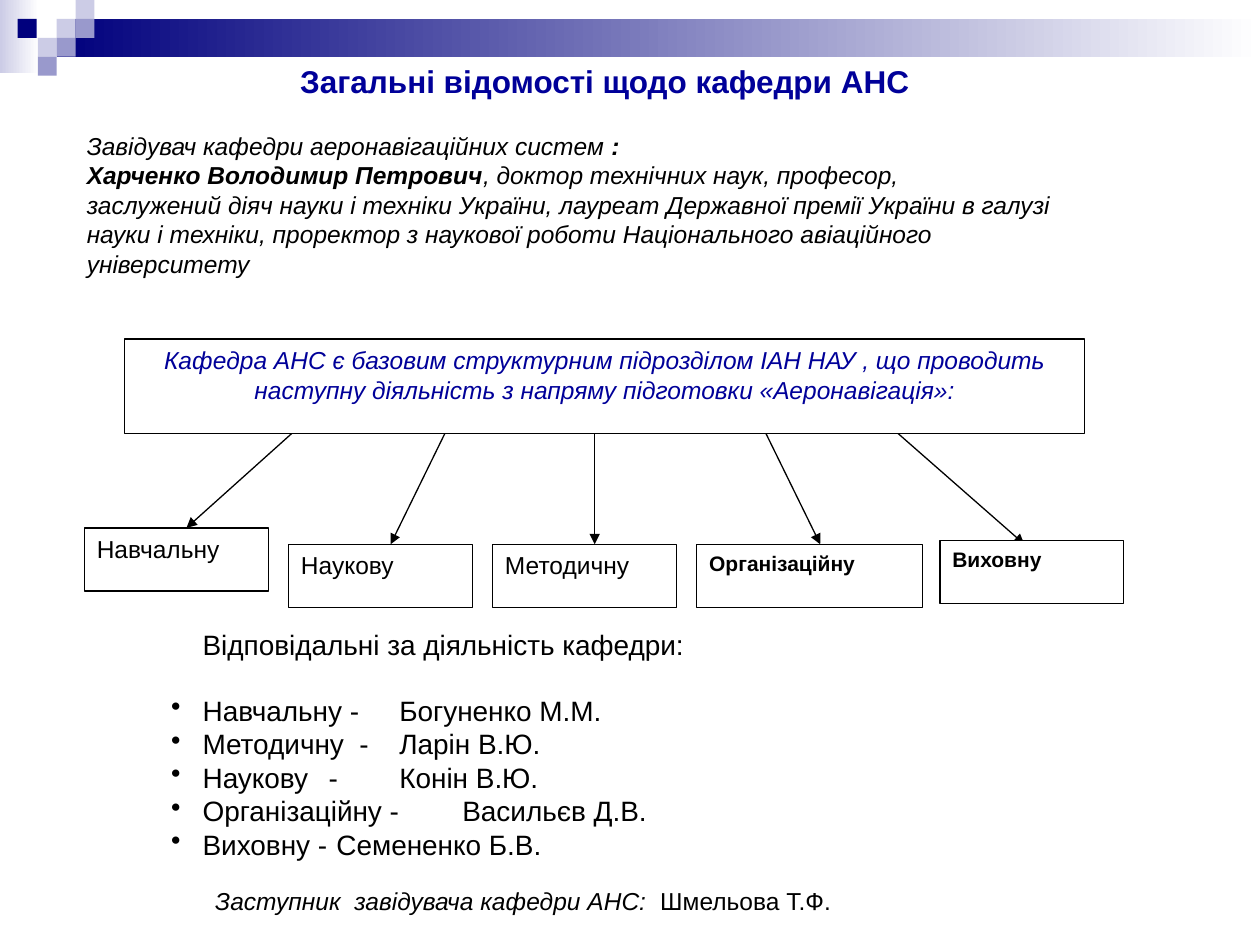
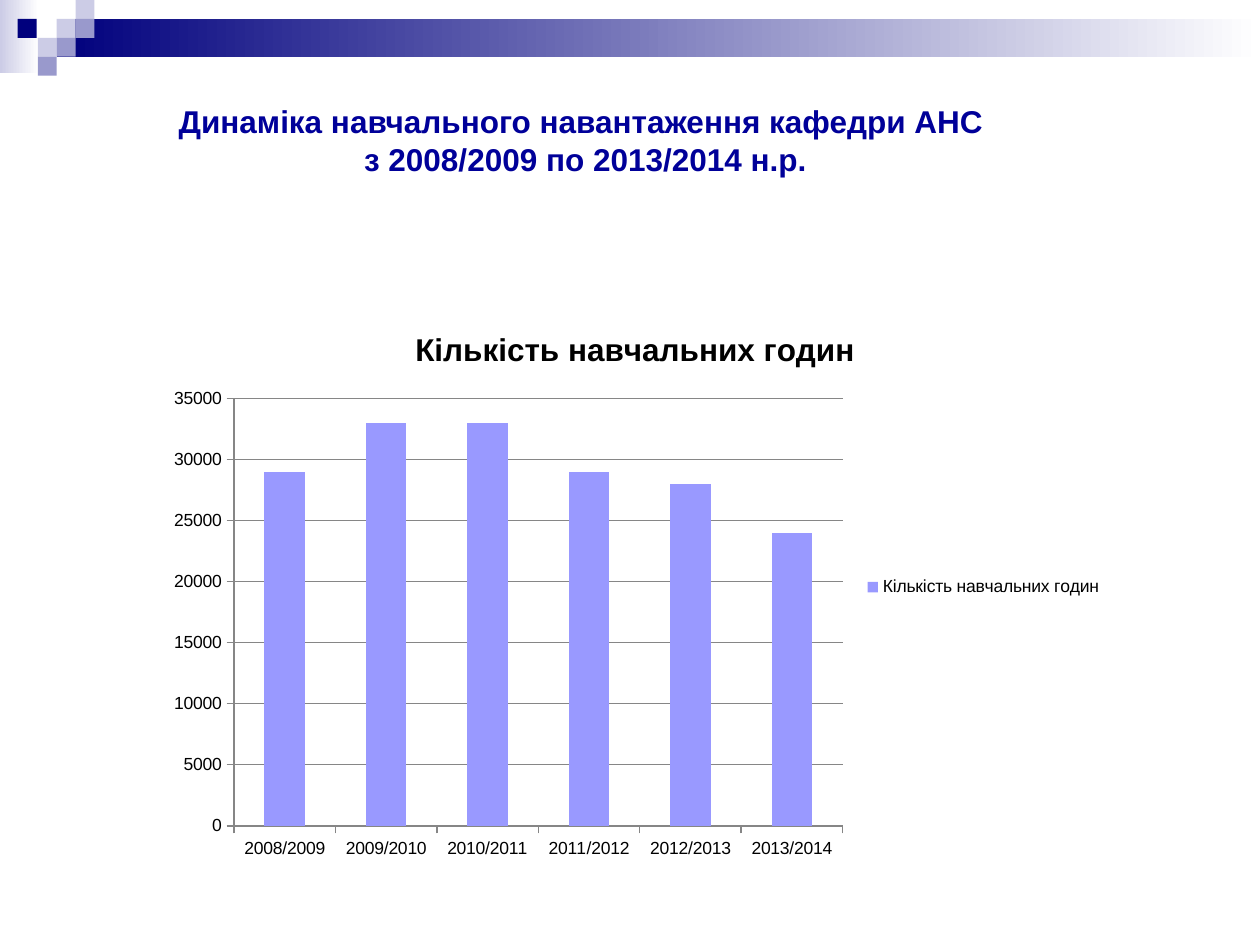
from lxml.etree import SubElement
from pptx import Presentation
from pptx.chart.data import CategoryChartData
from pptx.dml.color import RGBColor
from pptx.enum.chart import XL_CHART_TYPE as ChartType
from pptx.enum.chart import XL_LEGEND_POSITION as LegendPosition
from pptx.enum.chart import XL_TICK_MARK as TickMark
from pptx.enum.shapes import MSO_CONNECTOR as Connector
from pptx.enum.shapes import MSO_SHAPE as Shape
from pptx.enum.text import MSO_ANCHOR as Anchor
from pptx.enum.text import PP_ALIGN as Align
from pptx.oxml.ns import qn
from pptx.util import Inches, Pt

COLORS = {
    "navy": "00007D",
    "lilac": "9999CC",
    "pale": "CCCCE6",
    "white": "FFFFFF",
    "black": "000000",
    "heading": "000099",
    "bar": "9999FF",
    "grid": "868686",
}
FONT = "Arial"
TITLE = {"size": 18, "bold": True, "color": "heading"}
BODY = {"size": 14}
ITALIC = {"size": 14, "italic": True}
SMALL_BOLD = {"size": 12, "bold": True}
LIST = {"size": 16}

# Header mosaic: left, top and colour of each square
SQUARE = 0.15
MOSAIC = [
    (0.45, 0.15, "pale"), (0.6, 0, "pale"), (0.6, 0.15, "lilac"),
    (0.3, 0.3, "pale"), (0.14, 0.15, "navy"), (0.45, 0.3, "lilac"),
    (0.3, 0.45, "lilac"),
]

# Activity boxes: text, left, top, width, format
ACTIVITIES = [
    ("Навчальну", 0.67, 4.19, 1.46, BODY),
    ("Наукову", 2.29, 4.32, 1.46, BODY),
    ("Методичну", 3.91, 4.32, 1.46, BODY),
    ("Організаційну", 5.53, 4.32, 1.79, SMALL_BOLD),
    ("Виховну", 7.46, 4.29, 1.46, SMALL_BOLD),
]
# Arrows: start x, end x, end y
ARROWS = [
    (2.45, 1.48, 4.19), (3.59, 3.1, 4.32), (4.72, 4.72, 4.32),
    (6.02, 6.51, 4.32), (6.99, 8.13, 4.32),
]
RESPONSIBLE = [
    "Навчальну -\t Богуненко М.М.",
    "Методичну  -\t Ларін В.Ю.",
    "Наукову \t-\t Конін В.Ю.",
    "Організаційну -\t Васильєв Д.В.",
    "Виховну -\t Семененко Б.В.",
]
HOURS = {
    "2008/2009": 29000, "2009/2010": 33000, "2010/2011": 33000,
    "2011/2012": 29000, "2012/2013": 28000, "2013/2014": 24000,
}
HOURS_NAME = "Кількість навчальних годин"


def rgb(name):
    return RGBColor.from_string(COLORS[name])


def format_font(font, style):
    font.color.rgb = rgb(style.get("color", "black"))
    values = {"name": FONT, "size": Pt(style["size"]),
              "bold": style.get("bold", False),
              "italic": style.get("italic", False)}
    for attribute, value in values.items():
        setattr(font, attribute, value)


def write(frame, paragraphs, align=Align.LEFT, anchor=Anchor.TOP):
    """Fill a frame; each paragraph is a list of (text, style) runs."""
    frame.word_wrap = True
    frame.vertical_anchor = anchor
    for index, runs in enumerate(paragraphs):
        paragraph = frame.paragraphs[0] if index == 0 else frame.add_paragraph()
        paragraph.alignment = align
        for text, style in runs:
            run = paragraph.add_run()
            run.text = text
            format_font(run.font, style)


def add_text(slide, box, paragraphs, **placement):
    frame = slide.shapes.add_textbox(*map(Inches, box)).text_frame
    write(frame, paragraphs, **placement)
    return frame


def add_rectangle(slide, box, color):
    shape = slide.shapes.add_shape(Shape.RECTANGLE, *map(Inches, box))
    shape.shadow.inherit = False
    shape.fill.solid()
    shape.fill.fore_color.rgb = rgb(color)
    shape.line.fill.background()
    return shape


def add_gradient(slide, box, color):
    fill = add_rectangle(slide, box, color).fill
    fill.gradient()
    fill.gradient_angle = 0
    for stop, name, position in zip(fill.gradient_stops, (color, "white"), (0, 1)):
        stop.color.rgb = rgb(name)
        stop.position = position


def add_header(slide):
    add_gradient(slide, (0, 0, 0.31, 0.58), "pale")
    add_gradient(slide, (0.45, 0.15, 9.55, 0.3), "navy")
    for left, top, color in MOSAIC:
        add_rectangle(slide, (left, top, SQUARE, SQUARE), color)


def add_framed_box(slide, box, text, style, align=Align.LEFT):
    shape = add_rectangle(slide, box, "white")
    shape.line.color.rgb = rgb("black")
    shape.line.width = Pt(0.75)
    write(shape.text_frame, [[(text, style)]], align=align)


def add_arrow(slide, start, end):
    arrow = slide.shapes.add_connector(Connector.STRAIGHT,
                                       *map(Inches, start + end))
    arrow.line.color.rgb = rgb("black")
    arrow.line.width = Pt(0.75)
    SubElement(arrow.line._get_or_add_ln(), qn("a:tailEnd"), type="triangle")
    SubElement(arrow._element.spPr, qn("a:effectLst"))


def indent_list(frame):
    """Indent the heading and its items, and give the items bullets."""
    heading, *items = frame.paragraphs
    heading.space_after = Pt(18.4)
    for paragraph in frame.paragraphs:
        paragraph._p.get_or_add_pPr().set("marL", str(Inches(1)))
    for paragraph in items:
        properties = paragraph._p.get_or_add_pPr()
        properties.set("indent", str(Inches(-0.25)))
        SubElement(properties, qn("a:buChar"), char="•")


def add_hours_chart(slide, box):
    data = CategoryChartData()
    data.categories = HOURS.keys()
    data.add_series(HOURS_NAME, HOURS.values())
    chart = slide.shapes.add_chart(ChartType.COLUMN_CLUSTERED,
                                   *map(Inches, box), data).chart
    format_font(chart.font, {"size": 10})

    # Title and legend
    chart.has_title = True
    title = chart.chart_title
    title.include_in_layout = False
    write_run = title.text_frame.paragraphs[0].add_run()
    write_run.text = HOURS_NAME
    format_font(write_run.font, {"size": 18, "bold": True})
    chart.has_legend = True
    chart.legend.position = LegendPosition.RIGHT
    chart.legend.include_in_layout = False

    # Columns
    plot = chart.plots[0]
    plot.gap_width = 150
    plot.vary_by_categories = False
    fill = plot.series[0].format.fill
    fill.solid()
    fill.fore_color.rgb = rgb("bar")

    # Axes
    values = chart.value_axis
    for attribute, value in {"minimum_scale": 0, "maximum_scale": 35000,
                             "major_unit": 5000}.items():
        setattr(values, attribute, value)
    values.has_major_gridlines = True
    values.major_gridlines.format.line.color.rgb = rgb("grid")
    for axis in (chart.category_axis, values):
        axis.major_tick_mark = TickMark.OUTSIDE
        axis.format.line.color.rgb = rgb("grid")


def build_department(slide):
    add_header(slide)
    responsible = [["Відповідальні за діяльність кафедри:", LIST]]
    responsible += [[name, LIST] for name in RESPONSIBLE]
    indent_list(add_text(slide, (0.51, 4.93, 8.19, 1.97),
                         [[run] for run in responsible]))
    add_text(slide, (2.16, 0.44, 5.28, 0.4),
             [[("Загальні відомості щодо кафедри АНС", TITLE)]],
             align=Align.CENTER, anchor=Anchor.MIDDLE)

    # Head of the department and deputy
    bold_italic = {**ITALIC, "bold": True}
    add_text(slide, (0.59, 0.99, 7.95, 1.26), [
        [("Завідувач кафедри аеронавігаційних систем ", ITALIC), (":", bold_italic)],
        [("Харченко Володимир Петрович", bold_italic),
         (", доктор технічних наук, професор,", ITALIC)],
        [("заслужений діяч науки і техніки України, лауреат Державної премії "
          "України в галузі науки і техніки, проректор з наукової роботи "
          "Національного авіаційного університету", ITALIC)],
    ])
    add_text(slide, (1.61, 6.98, 7.95, 0.33),
             [[("Заступник  завідувача кафедри АНС:  ", ITALIC),
               ("Шмельова Т.Ф.", BODY)]])

    # Activity diagram: arrows lie behind the boxes
    for start_x, end_x, end_y in ARROWS:
        add_arrow(slide, (start_x, 3.32), (end_x, end_y))
    add_framed_box(slide, (0.99, 2.69, 7.62, 0.75),
                   "Кафедра АНС є базовим структурним підрозділом ІАН НАУ , "
                   "що проводить наступну діяльність з напряму підготовки "
                   "«Аеронавігація»:", {**ITALIC, "color": "heading"}, Align.CENTER)
    for text, left, top, width, style in ACTIVITIES:
        add_framed_box(slide, (left, top, width, 0.5), text, style)


def build_workload(slide):
    add_header(slide)
    add_text(slide, (1.22, 0.76, 6.85, 0.7),
             [[("Динаміка навчального навантаження кафедри АНС ", TITLE)],
              [("з 2008/2009 по 2013/2014 н.р.", TITLE)]], align=Align.CENTER)
    add_hours_chart(slide, (1.23, 2.42, 7.62, 4.48))


def main():
    presentation = Presentation()
    presentation.slide_width = Inches(10)
    presentation.slide_height = Inches(7.5)
    blank = presentation.slide_layouts[6]
    for build in (build_department, build_workload):
        build(presentation.slides.add_slide(blank))
    presentation.save("out.pptx")


if __name__ == "__main__":
    main()
